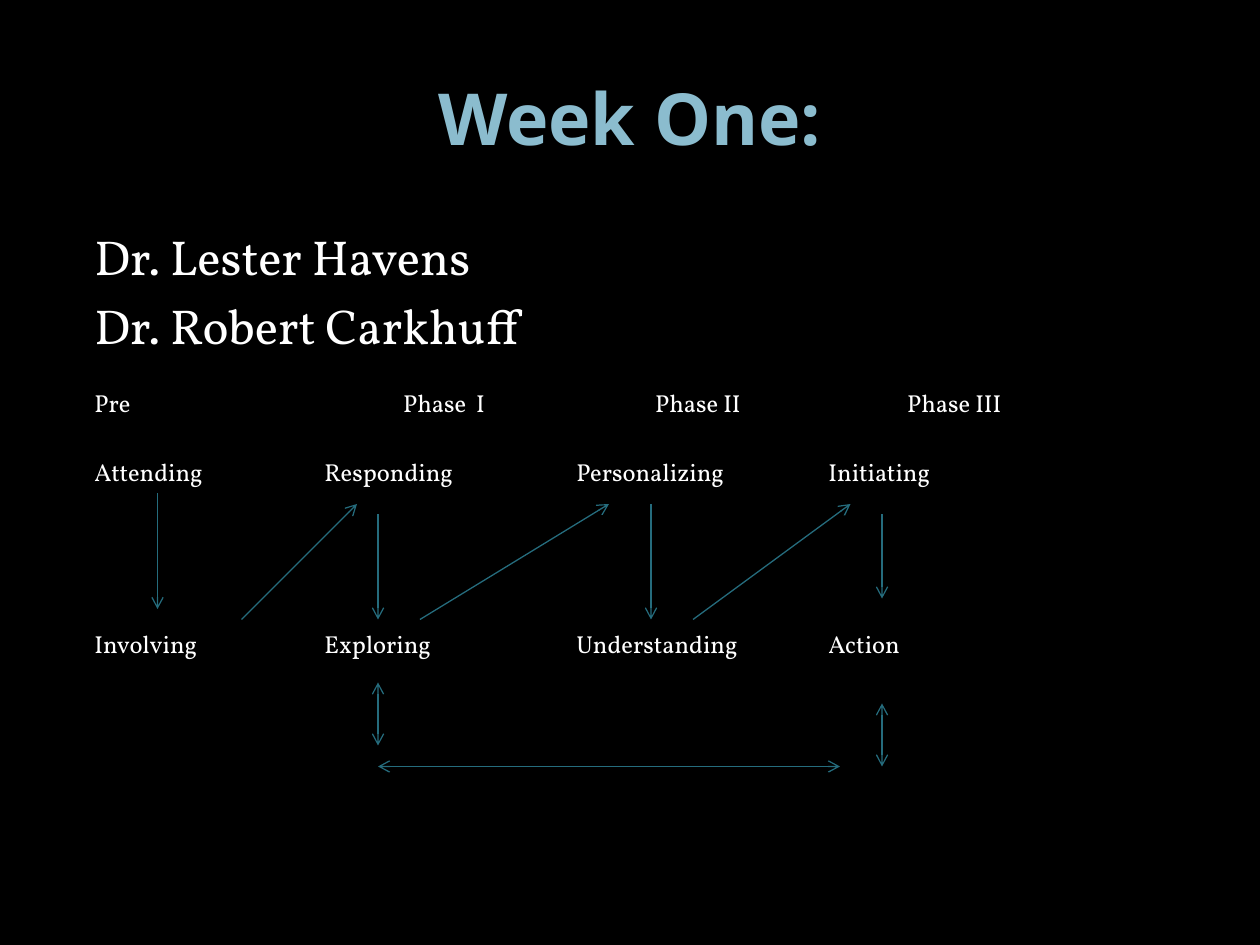
from typing import NamedTuple

from lxml import etree
from pptx import Presentation
from pptx.dml.color import RGBColor
from pptx.enum.shapes import MSO_CONNECTOR
from pptx.enum.text import MSO_ANCHOR, PP_ALIGN
from pptx.oxml.ns import qn
from pptx.util import Pt

STRAIGHT = MSO_CONNECTOR.STRAIGHT
MIDDLE, TOP = MSO_ANCHOR.MIDDLE, MSO_ANCHOR.TOP
CENTER = PP_ALIGN.CENTER

BLACK, WHITE, PALE_BLUE, TEAL = "000000", "FFFFFF", "8BBCCE", "256C7D"
TITLE_FONT, BODY_FONT = "Open Sans", "Vollkorn"
PHASE_TABS = (176.4, 320.4, 464.4)
SKILL_TABS = (131.4, 275.4, 419.4)


class Line(NamedTuple):
    text: str
    size: float
    space_before: float
    tabs: tuple[float, ...] = ()


class Arrow(NamedTuple):
    x1: float
    y1: float
    x2: float
    y2: float
    both_ends: bool = False


LINES = (
    Line("Dr. Lester Havens", 28, 0),
    Line("Dr. Robert Carkhuff", 28, 5.6),
    Line("Pre\tPhase  I\tPhase II\tPhase III", 14, 19.6, PHASE_TABS),
    Line("Attending\tResponding\tPersonalizing\tInitiating", 14, 22.4, SKILL_TABS),
    Line("Involving\tExploring\tUnderstanding\tAction", 14, 81.2, SKILL_TABS),
)

ARROWS = (
    Arrow(504, 402, 504, 438, True),
    Arrow(480, 438, 216, 438, True),
    Arrow(216, 390, 216, 426, True),
    Arrow(90, 282, 90, 348),
    Arrow(138, 354, 204, 288),
    Arrow(216, 294, 216, 354),
    Arrow(240, 354, 348, 288),
    Arrow(372, 288, 372, 354),
    Arrow(396, 354, 486, 288),
    Arrow(504, 294, 504, 342),
)


def color(value: str) -> RGBColor:
    return RGBColor.from_string(value)


def format_runs(paragraph, font_name: str, size: float, value: str, bold: bool = False) -> None:
    for run in paragraph.runs:
        run.font.name = font_name
        run.font.size = Pt(size)
        run.font.bold = bold
        run.font.color.rgb = color(value)


def add_text_frame(slide, top: float, height: float, anchor):
    """Add a full-width wrapping text box and return its text frame."""
    shape = slide.shapes.add_textbox(Pt(36), Pt(top), Pt(648), Pt(height))
    text_frame = shape.text_frame
    text_frame.word_wrap = True
    text_frame.vertical_anchor = anchor
    return text_frame


def set_tabs(paragraph, positions: tuple[float, ...]) -> None:
    properties = paragraph._p.get_or_add_pPr()
    tab_list = etree.SubElement(properties, qn("a:tabLst"))
    for position in positions:
        etree.SubElement(tab_list, qn("a:tab"), pos=str(Pt(position)), algn="l")


def add_title(slide) -> None:
    text_frame = add_text_frame(slide, 21.6, 90, MIDDLE)
    text_frame.text = "Week One:"
    paragraph = text_frame.paragraphs[0]
    paragraph.alignment = CENTER
    format_runs(paragraph, TITLE_FONT, 41, PALE_BLUE, bold=True)


def add_body(slide) -> None:
    text_frame = add_text_frame(slide, 126, 372, TOP)
    text_frame.margin_left = Pt(18)
    text_frame.text = "\n".join(line.text for line in LINES)
    for paragraph, line in zip(text_frame.paragraphs, LINES):
        paragraph.space_before = Pt(line.space_before)
        if line.tabs:
            set_tabs(paragraph, line.tabs)
        format_runs(paragraph, BODY_FONT, line.size, WHITE)


def add_arrow(slide, arrow: Arrow) -> None:
    connector = slide.shapes.add_connector(
        STRAIGHT, Pt(arrow.x1), Pt(arrow.y1), Pt(arrow.x2), Pt(arrow.y2)
    )
    connector.line.color.rgb = color(TEAL)
    connector.line.width = Pt(0.75)
    outline = connector.line._get_or_add_ln()
    if arrow.both_ends:
        etree.SubElement(outline, qn("a:headEnd"), type="arrow")
    etree.SubElement(outline, qn("a:tailEnd"), type="arrow")
    etree.SubElement(connector._element.spPr, qn("a:effectLst"))


def main() -> None:
    presentation = Presentation()
    presentation.slide_width, presentation.slide_height = Pt(720), Pt(540)
    slide = presentation.slides.add_slide(presentation.slide_layouts[6])
    slide.background.fill.solid()
    slide.background.fill.fore_color.rgb = color(BLACK)
    add_title(slide)
    add_body(slide)
    for arrow in ARROWS:
        add_arrow(slide, arrow)
    presentation.save("out.pptx")


if __name__ == "__main__":
    main()
